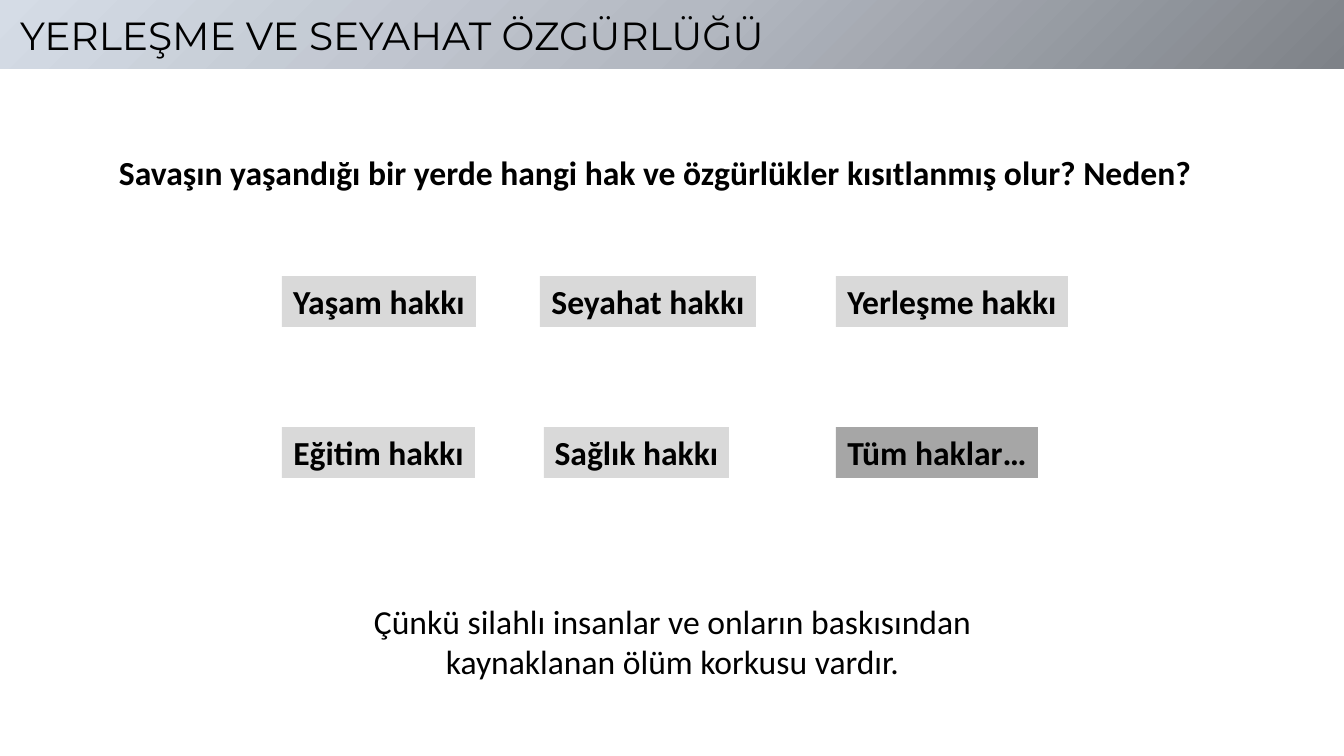
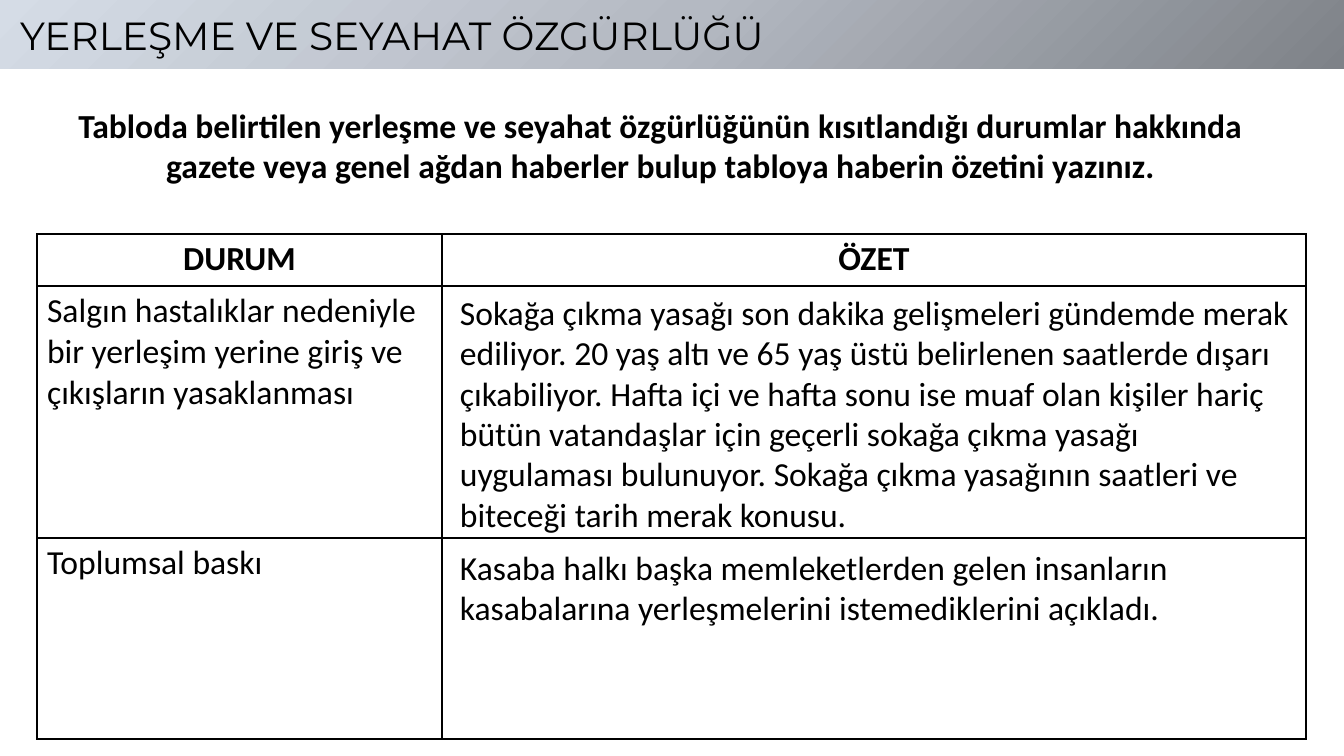
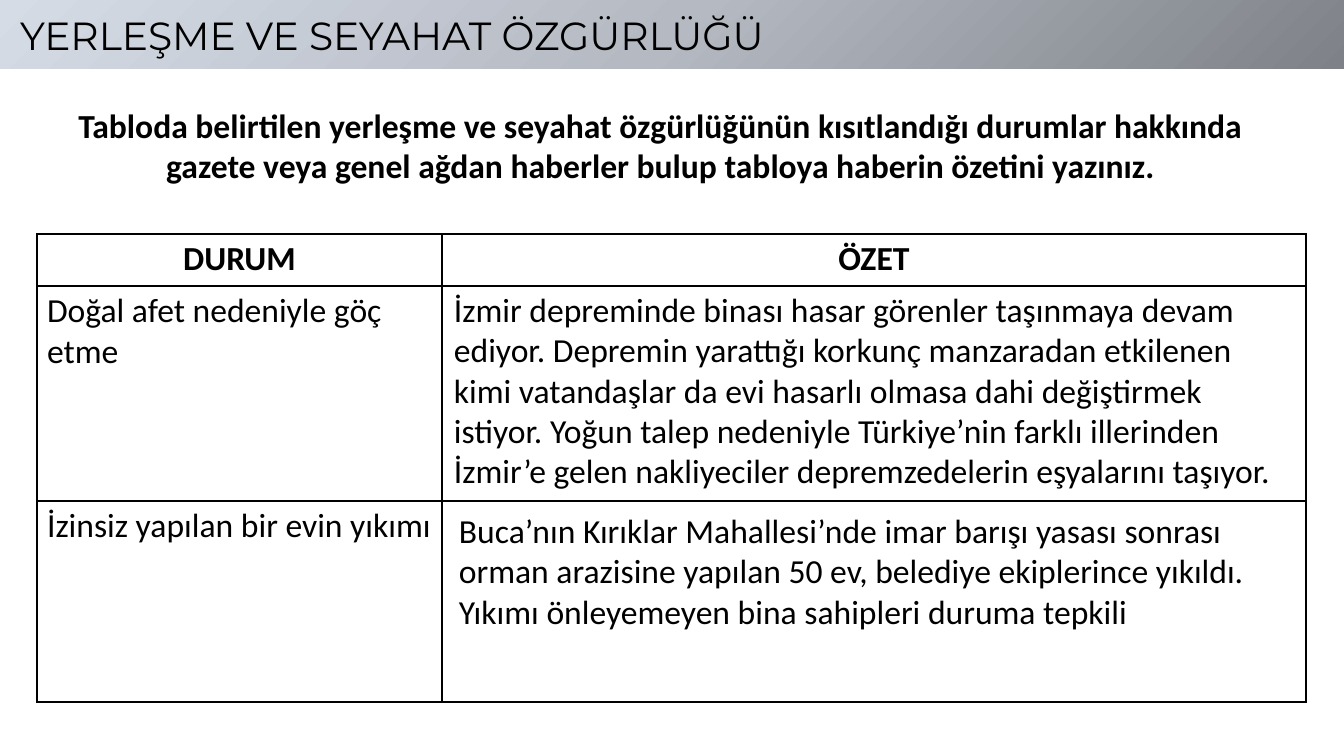
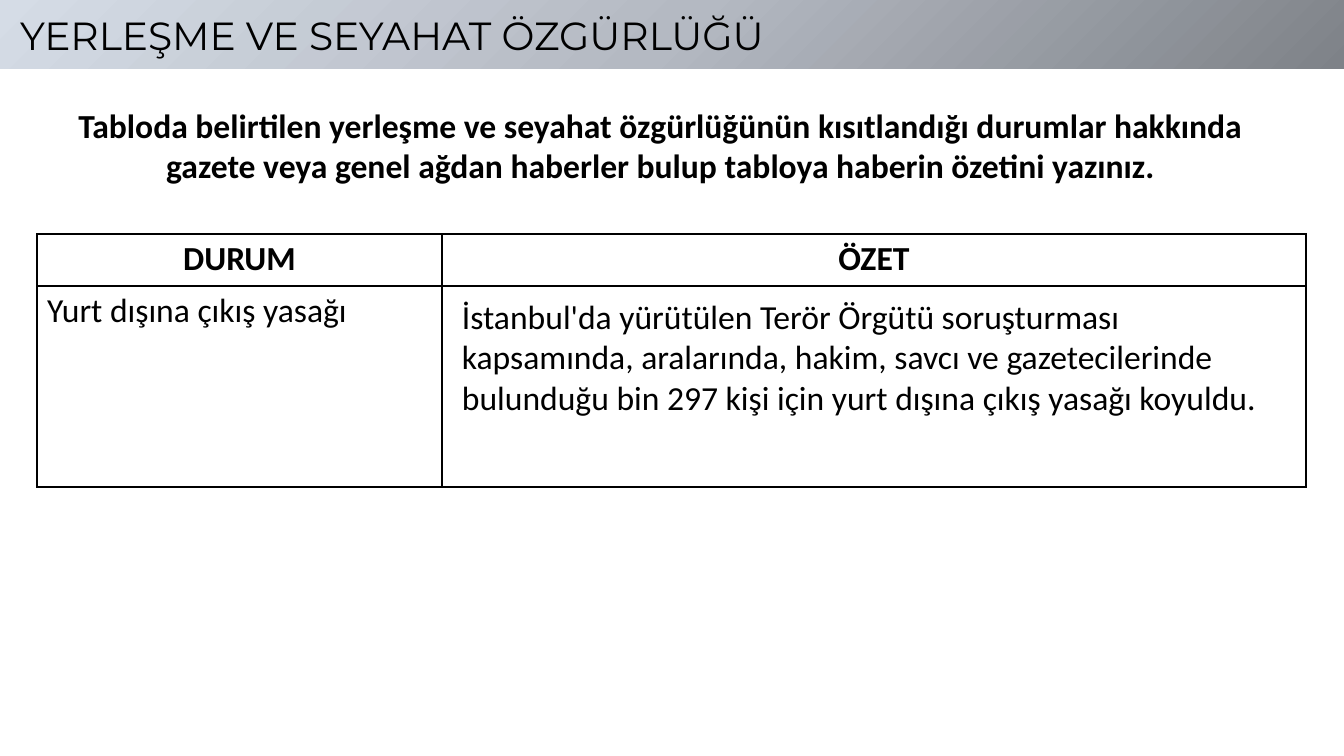
import copy

import pptx
import pptx.dml.color
import pptx.enum.shapes
import pptx.enum.text
import pptx.oxml
import pptx.oxml.ns
import pptx.util

RGBColor = pptx.dml.color.RGBColor
ALIGN = pptx.enum.text.PP_ALIGN
ANCHOR = pptx.enum.text.MSO_ANCHOR
RECTANGLE = pptx.enum.shapes.MSO_SHAPE.RECTANGLE
qn = pptx.oxml.ns.qn

# Shared look
EMU_PER_PX = 914400 / 100.8
PAGE_WIDTH, PAGE_HEIGHT = 1344, 756
BLACK = RGBColor(0x00, 0x00, 0x00)
LIGHT_GREY = RGBColor(0xD9, 0xD9, 0xD9)
MID_GREY = RGBColor(0xA6, 0xA6, 0xA6)
BAND_STOPS = [
    (0, RGBColor(0x7E, 0x82, 0x88)),
    (0.5, RGBColor(0xB4, 0xB9, 0xC2)),
    (1, RGBColor(0xD5, 0xDC, 0xE6)),
]
BODY_FONT, TITLE_FONT = "Calibri", "Montserrat"
BODY_SIZE, TITLE_SIZE = 24, 28

TITLE = "YERLEŞME VE SEYAHAT ÖZGÜRLÜĞÜ"
TASK = ("Tabloda belirtilen yerleşme ve seyahat özgürlüğünün kısıtlandığı durumlar "
        "hakkında gazete veya genel ağdan haberler bulup tabloya haberin özetini yazınız.")
HEADERS = ("DURUM", "ÖZET")

# Table measures
TABLE_LEFT, TABLE_TOP = 37, 234
COLUMN_WIDTHS = (405, 864)
HEADER_HEIGHT = 52

# Rights on the first page: left, width, text, fill for each row
RIGHTS_ROWS = [
    [(0, 194, "Yaşam hakkı", LIGHT_GREY),
     (258, 216, "Seyahat hakkı", LIGHT_GREY),
     (554, 232, "Yerleşme hakkı", LIGHT_GREY)],
    [(0, 193, "Eğitim hakkı", LIGHT_GREY),
     (262, 185, "Sağlık hakkı", LIGHT_GREY),
     (554, 202, "Tüm haklar…", MID_GREY)],
]

# Table pages: row height, situation, summary and its box within the row's second cell
TABLE_PAGES = [
    [(252, "Salgın hastalıklar nedeniyle bir yerleşim yerine giriş ve çıkışların yasaklanması",
      "Sokağa çıkma yasağı son dakika gelişmeleri gündemde merak ediliyor. 20 yaş altı ve "
      "65 yaş üstü belirlenen saatlerde dışarı çıkabiliyor. Hafta içi ve hafta sonu ise muaf "
      "olan kişiler hariç bütün vatandaşlar için geçerli sokağa çıkma yasağı uygulaması "
      "bulunuyor. Sokağa çıkma yasağının saatleri ve biteceği tarih merak konusu.",
      (8, 1, 850, 254)),
     (201, "Toplumsal baskı",
      "Kasaba halkı başka memleketlerden gelen insanların\n"
      "kasabalarına yerleşmelerini istemediklerini açıkladı.",
      (8, 4, 850, 92))],
    [(215, "Doğal afet nedeniyle göç etme",
      "İzmir depreminde binası hasar görenler taşınmaya devam ediyor. Depremin yarattığı "
      "korkunç manzaradan etkilenen kimi vatandaşlar da evi hasarlı olmasa dahi değiştirmek "
      "istiyor. Yoğun talep nedeniyle Türkiye’nin farklı illerinden İzmir’e gelen "
      "nakliyeciler depremzedelerin eşyalarını taşıyor.",
      (2, -2, 852, 214)),
     (201, "İzinsiz yapılan bir evin yıkımı",
      "Buca’nın Kırıklar Mahallesi’nde imar barışı yasası sonrası orman arazisine yapılan "
      "50 ev, belediye ekiplerince yıkıldı. Yıkımı önleyemeyen bina sahipleri duruma tepkili",
      (7, 4, 847, 132))],
    [(201, "Yurt dışına çıkış yasağı",
      "İstanbul'da yürütülen Terör Örgütü soruşturması kapsamında, aralarında, hakim, savcı "
      "ve gazetecilerinde bulunduğu bin 297 kişi için yurt dışına çıkış yasağı koyuldu.",
      (10, 5, 820, 132))],
]


def px(length):
    return pptx.util.Emu(round(length * EMU_PER_PX))


def write(frame, text, align=ALIGN.LEFT, bold=False, font=BODY_FONT, size=BODY_SIZE):
    para = frame.paragraphs[0]
    para.text = text
    para.alignment = align
    para.font.name = font
    para.font.size = pptx.util.Pt(size)
    para.font.bold = bold
    para.font.color.rgb = BLACK


def fit(frame, wrap):
    frame.word_wrap = wrap
    frame.auto_size = pptx.enum.text.MSO_AUTO_SIZE.SHAPE_TO_FIT_TEXT


def add_text(page, box, text, align=ALIGN.LEFT, bold=False, wrap=True):
    frame = page.shapes.add_textbox(*map(px, box)).text_frame
    fit(frame, wrap)
    write(frame, text, align, bold)


def add_rectangle(page, box):
    shape = page.shapes.add_shape(RECTANGLE, *map(px, box))
    shape.shadow.inherit = False
    shape.line.fill.background()
    return shape


def add_title_band(page, box):
    band = add_rectangle(page, box)
    # Gradient with a third stop, dark at the lower right
    band.fill.gradient()
    band.fill.gradient_angle = 135
    stop_list = band.fill._xPr.find(".//" + qn("a:gsLst"))
    stop_list.append(copy.deepcopy(stop_list[0]))
    for stop, (position, color) in zip(band.fill.gradient_stops, BAND_STOPS):
        stop.position = position
        stop.color.rgb = color
    frame = band.text_frame
    frame.margin_left = px(20)
    frame.vertical_anchor = ANCHOR.MIDDLE
    write(frame, TITLE, font=TITLE_FONT, size=TITLE_SIZE)


def add_page(deck):
    page = deck.slides.add_slide(deck.slide_layouts[6])
    add_title_band(page, (0, 0, PAGE_WIDTH, 69))
    return page


def add_rights(page, left, top, row_pitch):
    for row, rights in enumerate(RIGHTS_ROWS):
        for offset, width, text, color in rights:
            chip = add_rectangle(page, (left + offset, top + row * row_pitch, width, 51))
            chip.fill.solid()
            chip.fill.fore_color.rgb = color
            chip.text_frame.vertical_anchor = ANCHOR.TOP
            fit(chip.text_frame, False)
            write(chip.text_frame, text, ALIGN.CENTER, True)


def style_cell(cell):
    cell.fill.background()
    properties = cell._tc.get_or_add_tcPr()
    for index, side in enumerate("LRTB"):
        properties.insert(index, pptx.oxml.parse_xml(
            f'<a:ln{side} {pptx.oxml.ns.nsdecls("a")} w="12700"><a:solidFill>'
            f'<a:srgbClr val="{BLACK}"/></a:solidFill></a:ln{side}>'))


def add_situation_table(page, left, top, rows):
    heights = [HEADER_HEIGHT] + [row[0] for row in rows]
    table = page.shapes.add_table(len(heights), len(COLUMN_WIDTHS), px(left), px(top),
                                  px(sum(COLUMN_WIDTHS)), px(sum(heights))).table
    table.first_row = table.horz_banding = False
    for column, width in zip(table.columns, COLUMN_WIDTHS):
        column.width = px(width)
    for table_row, height in zip(table.rows, heights):
        table_row.height = px(height)
    for cell in table.iter_cells():
        style_cell(cell)
    for column, header in enumerate(HEADERS):
        write(table.cell(0, column).text_frame, header, ALIGN.CENTER, True)

    # Situations in the cells, summaries in boxes over the second column
    row_top = top + HEADER_HEIGHT
    for index, (height, situation, summary, box) in enumerate(rows, 1):
        write(table.cell(index, 0).text_frame, situation)
        dx, dy, width, box_height = box
        add_text(page, (left + COLUMN_WIDTHS[0] + dx, row_top + dy, width, box_height), summary)
        row_top += height


def add_question_page(deck):
    page = add_page(deck)
    add_text(page, (109, 147, 1157, 51),
             "Savaşın yaşandığı bir yerde hangi hak ve özgürlükler kısıtlanmış olur? Neden?",
             bold=True)
    add_rights(page, 282, 276, 151)
    add_text(page, (361, 596, 623, 92),
             "Çünkü silahlı insanlar ve onların baskısından\nkaynaklanan ölüm korkusu vardır.",
             ALIGN.CENTER, wrap=False)


def add_table_page(deck, rows):
    page = add_page(deck)
    add_text(page, (26, 100, 1269, 92), TASK, ALIGN.CENTER, True)
    add_situation_table(page, TABLE_LEFT, TABLE_TOP, rows)


def main():
    deck = pptx.Presentation()
    deck.slide_width, deck.slide_height = px(PAGE_WIDTH), px(PAGE_HEIGHT)
    add_question_page(deck)
    for rows in TABLE_PAGES:
        add_table_page(deck, rows)
    deck.save("out.pptx")


if __name__ == "__main__":
    main()
